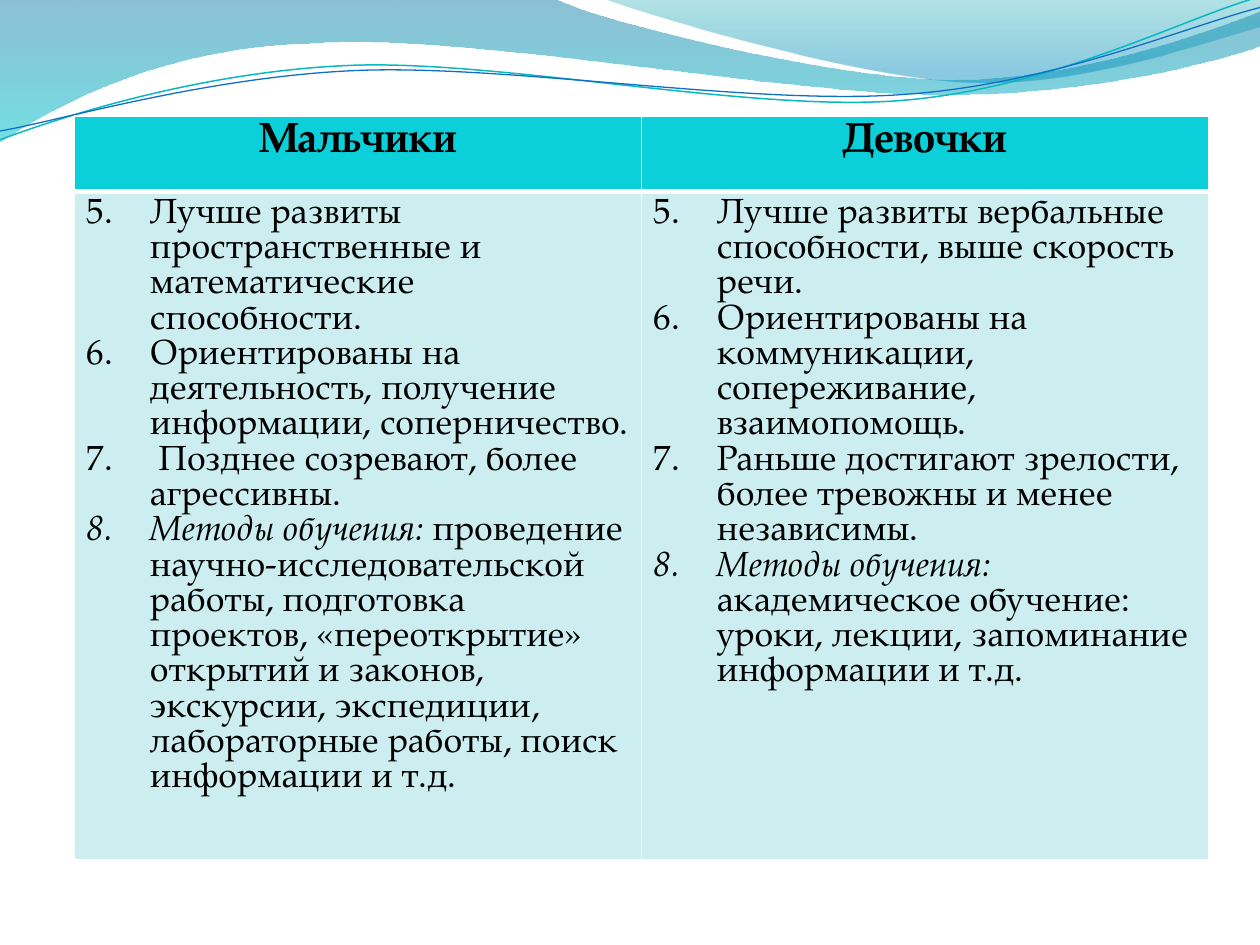
from dataclasses import dataclass
from typing import Optional

import pptx
import pptx.dml.color
import pptx.enum.text
import pptx.oxml
import pptx.oxml.ns
import pptx.util
from pptx.util import Inches

FONT = "TeX Gyre Pagella"
UNITS_PER_INCH = 100
Point = tuple[float, float]


@dataclass
class Stop:
    position: float
    color: str
    opacity: int


@dataclass
class Wave:
    start: Point
    segments: list[tuple[float, ...]]
    stops: Optional[list[Stop]] = None
    line: Optional[str] = None
    width: float = 0


@dataclass
class Column:
    title: str
    items: list[str]
    methods: str


WAVES = [
    Wave((0, 0), [
        (4.4, -0.01), (4.76, 0.17, 6.64, 0.63, 7.58, 0.63),
        (8.53, 0.63, 9.58, 0.26, 10, 0.09), (10.01, 0.36),
        (9.83, 0.44, 8.7, 0.76, 7.46, 0.75),
        (6.22, 0.75, 3.82, 0.28, 2.57, 0.34),
        (1.29, 0.36, 0.46, 0.83, -0.01, 1.13),
    ], stops=[Stop(0, "0074A1", 45), Stop(1, "00C6CF", 55)]),
    Wave((4.79, -0.01), [
        (5.09, 0.11, 6.82, 0.62, 7.69, 0.65),
        (8.56, 0.69, 9.61, 0.32, 10, 0.21), (10, 0),
    ], stops=[Stop(0, "00A1A9", 30), Stop(0.8, "008BBF", 45)]),
    Wave((0, 1.11), [
        (0.48, 0.93, 1.58, 0.57, 2.77, 0.52),
        (3.95, 0.47, 5.93, 0.89, 7.13, 0.8),
        (8.33, 0.71, 9.38, 0.15, 9.98, -0.02),
    ], line="0AB8BF", width=0.85),
    Wave((0, 1.04), [
        (0.47, 0.96, 1.64, 0.61, 2.83, 0.56),
        (4.03, 0.51, 5.97, 0.84, 7.17, 0.75),
        (8.36, 0.67, 9.41, 0.21, 10, 0.06),
    ], line="0F6FC6", width=0.75),
]

COLUMNS = [
    Column("Мальчики", [
        "Лучше развиты пространственные и математические способности.",
        "Ориентированы на деятельность, получение информации, соперничество.",
        " Позднее созревают, более агрессивны.",
    ], "проведение научно-исследовательской работы, подготовка проектов, "
       "«переоткрытие» открытий и законов, экскурсии, экспедиции, "
       "лабораторные работы, поиск информации и т.д."),
    Column("Девочки", [
        "Лучше развиты вербальные способности, выше скорость речи.",
        "Ориентированы на коммуникации, сопереживание, взаимопомощь.",
        "Раньше достигают зрелости, более тревожны и менее независимы.",
    ], "академическое обучение: уроки, лекции, запоминание информации и т.д."),
]


def rgb(color: str) -> pptx.dml.color.RGBColor:
    return pptx.dml.color.RGBColor.from_string(color)


def add_xml(parent, tag: str, **attrs):
    child = pptx.oxml.parse_xml(f"<a:{tag} {pptx.oxml.ns.nsdecls('a')}/>")
    for name, value in attrs.items():
        child.set(name, str(value))
    parent.append(child)
    return child


def bend_segments(sp, segments: list[tuple[float, ...]]) -> None:
    lines = iter(list(sp._element.iter(pptx.oxml.ns.qn("a:lnTo"))))
    for segment in segments:
        first = next(lines)
        if len(segment) == 2:
            continue
        bezier = add_xml(first.getparent(), "cubicBezTo")
        first.addprevious(bezier)
        for line in (first, next(lines), next(lines)):
            bezier.append(line[0])
            line.getparent().remove(line)


def draw_wave(s, wave: Wave) -> None:
    points = [(segment[k], segment[k + 1])
              for segment in [wave.start] + wave.segments
              for k in range(0, len(segment), 2)]
    points = [(x * UNITS_PER_INCH, y * UNITS_PER_INCH) for x, y in points]
    builder = s.shapes.build_freeform(*points[0],
                                      scale=Inches(1) / UNITS_PER_INCH)
    builder.add_line_segments(points[1:], close=wave.stops is not None)
    sp = builder.convert_to_shape()
    bend_segments(sp, wave.segments)
    sp.shadow.inherit = False
    if wave.line:
        sp.fill.background()
        sp.line.color.rgb = rgb(wave.line)
        sp.line.width = pptx.util.Pt(wave.width)
        return
    sp.line.fill.background()
    sp.fill.gradient()
    sp.fill.gradient_angle = 270
    for target, stop in zip(sp.fill.gradient_stops, wave.stops):
        target.position = stop.position
        target.color.rgb = rgb(stop.color)
    colors = sp.fill._xPr.iter(pptx.oxml.ns.qn("a:srgbClr"))
    for color, stop in zip(colors, wave.stops):
        add_xml(color, "alpha", val=stop.opacity * 1000)


def format_run(r, size: float, bold: bool = False, italic: bool = False) -> None:
    r.font.name = FONT
    r.font.size = pptx.util.Pt(size)
    r.font.bold = bold
    r.font.italic = italic
    r.font.color.rgb = rgb("000000")


def style_cell(cell, color: str, bottom: float) -> None:
    tcPr = cell._tc.get_or_add_tcPr()
    for side, width in (("L", 1), ("R", 1), ("T", 1), ("B", bottom)):
        ln = add_xml(tcPr, f"ln{side}", w=pptx.util.Pt(width))
        add_xml(add_xml(ln, "solidFill"), "srgbClr", val="FFFFFF")
    cell.fill.solid()
    cell.fill.fore_color.rgb = rgb(color)


def fill_column(table, index: int, column: Column) -> None:
    header, body = table.cell(0, index), table.cell(1, index)
    style_cell(header, "0BD0D9", 3)
    style_cell(body, "CCEEF1", 1)
    header.text_frame.text = column.title
    p = header.text_frame.paragraphs[0]
    p.alignment = pptx.enum.text.PP_ALIGN.CENTER
    format_run(p.runs[0], 24, bold=True)

    tf = body.text_frame
    tf.text = "\n".join(column.items + ["Методы обучения: "])
    for p in tf.paragraphs:
        pPr = p._p.get_or_add_pPr()
        pPr.set("marL", str(Inches(0.5)))
        pPr.set("indent", str(Inches(-0.5)))
        add_xml(pPr, "buFont", typeface="+mj-lt")
        add_xml(pPr, "buAutoNum", type="arabicPeriod", startAt=5)
        format_run(p.runs[0], 20)
    p.runs[0].font.italic = True
    r = p.add_run()
    r.text = column.methods
    format_run(r, 20)


def main() -> None:
    prs = pptx.Presentation()
    prs.slide_width, prs.slide_height = Inches(10), Inches(7.5)
    s = prs.slides.add_slide(prs.slide_layouts[6])
    for wave in WAVES:
        draw_wave(s, wave)
    frame = s.shapes.add_table(2, len(COLUMNS), Inches(0.59), Inches(0.92),
                               Inches(9), Inches(5.9))
    table = frame.table
    table.rows[0].height, table.rows[1].height = Inches(0.6), Inches(5.3)
    for index, column in enumerate(COLUMNS):
        fill_column(table, index, column)
    prs.save("out.pptx")


if __name__ == "__main__":
    main()
